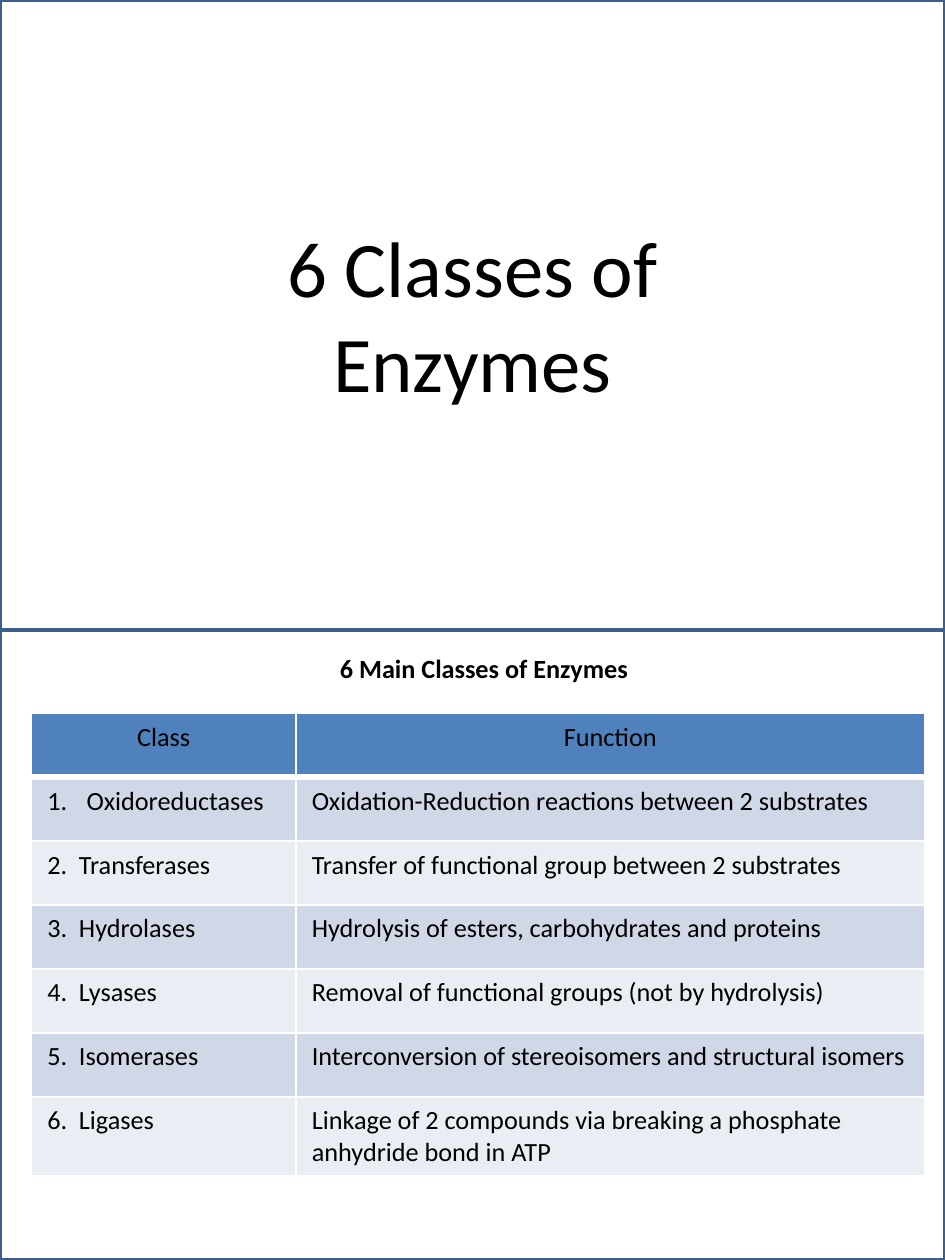
from lxml.etree import SubElement
from pptx import Presentation
from pptx.dml.color import RGBColor
from pptx.enum.shapes import MSO_CONNECTOR, MSO_SHAPE
from pptx.enum.text import MSO_AUTO_SIZE, PP_ALIGN
from pptx.oxml.ns import qn
from pptx.util import Inches, Pt


def color(hex_string):
    return RGBColor.from_string(hex_string)


def write(frame, text, size, align, bold=False):
    """Fill a text frame, one paragraph per line of text."""
    frame.text = text
    font_format = {"name": "Calibri", "size": Pt(size), "bold": bold}
    for paragraph in frame.paragraphs:
        paragraph.alignment = align
        font = paragraph.runs[0].font
        for attribute, value in font_format.items():
            setattr(font, attribute, value)
        font.color.rgb = color("000000")


prs = Presentation()
prs.slide_width, prs.slide_height = Inches(6), Inches(8)
slide = prs.slides.add_slide(prs.slide_layouts[6])
shapes = slide.shapes

# Two stacked panels with a divider
divider = shapes.add_connector(
    MSO_CONNECTOR.STRAIGHT, Inches(0), Inches(4), Inches(6), Inches(4))
divider.line.color.rgb = color("4B7EBC")
divider.line.width = Pt(1)
SubElement(divider._element.spPr, qn("a:effectLst"))

for panel_top in (0, 4):
    panel = shapes.add_shape(
        MSO_SHAPE.RECTANGLE, Inches(0), Inches(panel_top), Inches(6), Inches(4))
    panel.shadow.inherit = False
    panel.fill.background()
    panel.line.color.rgb = color("3A5F8C")
    panel.line.width = Pt(2)

# Panel headings
headings = [
    ("6 Classes of\nEnzymes", (1.71, 1.34, 2.58, 1.31), 36, PP_ALIGN.CENTER, False),
    ("6 Main Classes of Enzymes", (2.06, 4.09, 2.05, 0.3), 12, PP_ALIGN.LEFT, True),
]
for text, place, size, align, bold in headings:
    heading = shapes.add_textbox(*[Inches(length) for length in place])
    heading.text_frame.word_wrap = False
    heading.text_frame.auto_size = MSO_AUTO_SIZE.SHAPE_TO_FIT_TEXT
    write(heading.text_frame, text, size, align, bold)

# Table of enzyme classes
enzyme_rows = [
    ("Class", "Function"),
    ("Oxidoreductases", "Oxidation-Reduction reactions between 2 substrates"),
    ("2.  Transferases", "Transfer of functional group between 2 substrates"),
    ("3.  Hydrolases", "Hydrolysis of esters, carbohydrates and proteins"),
    ("4.  Lysases", "Removal of functional groups (not by hydrolysis)"),
    ("5.  Isomerases", "Interconversion of stereoisomers and structural isomers"),
    ("6.  Ligases",
     "Linkage of 2 compounds via breaking a phosphate anhydride bond in ATP"),
]
enzymes = shapes.add_table(
    len(enzyme_rows), 2, Inches(0.2), Inches(4.53), Inches(5.67), Inches(2.84)).table
for column, width in zip(enzymes.columns, (1.68, 3.99)):
    column.width = Inches(width)

for row, texts in enumerate(enzyme_rows):
    is_header = row == 0
    band = "4F81BD" if is_header else ("E9EDF4", "D0D8E8")[row % 2]
    for col, text in enumerate(texts):
        cell = enzymes.cell(row, col)
        write(cell.text_frame, text, 12,
              PP_ALIGN.CENTER if is_header else PP_ALIGN.LEFT)
        properties = cell._tc.get_or_add_tcPr()
        for side in ("lnL", "lnR", "lnT", "lnB"):
            thickness = 3 if is_header and side == "lnB" else 1
            border = SubElement(properties, qn(f"a:{side}"), w=str(Pt(thickness)))
            border_fill = SubElement(border, qn("a:solidFill"))
            SubElement(border_fill, qn("a:srgbClr"), val="FFFFFF")
        cell.fill.solid()
        cell.fill.fore_color.rgb = color(band)

# The first class is an automatically numbered item
numbered = enzymes.cell(1, 0).text_frame.paragraphs[0]._p.get_or_add_pPr()
numbered.set("marL", str(Inches(0.25)))
numbered.set("indent", str(Inches(-0.25)))
SubElement(numbered, qn("a:buFont"), typeface="+mj-lt")
SubElement(numbered, qn("a:buAutoNum"), type="arabicPeriod")

prs.save("out.pptx")
